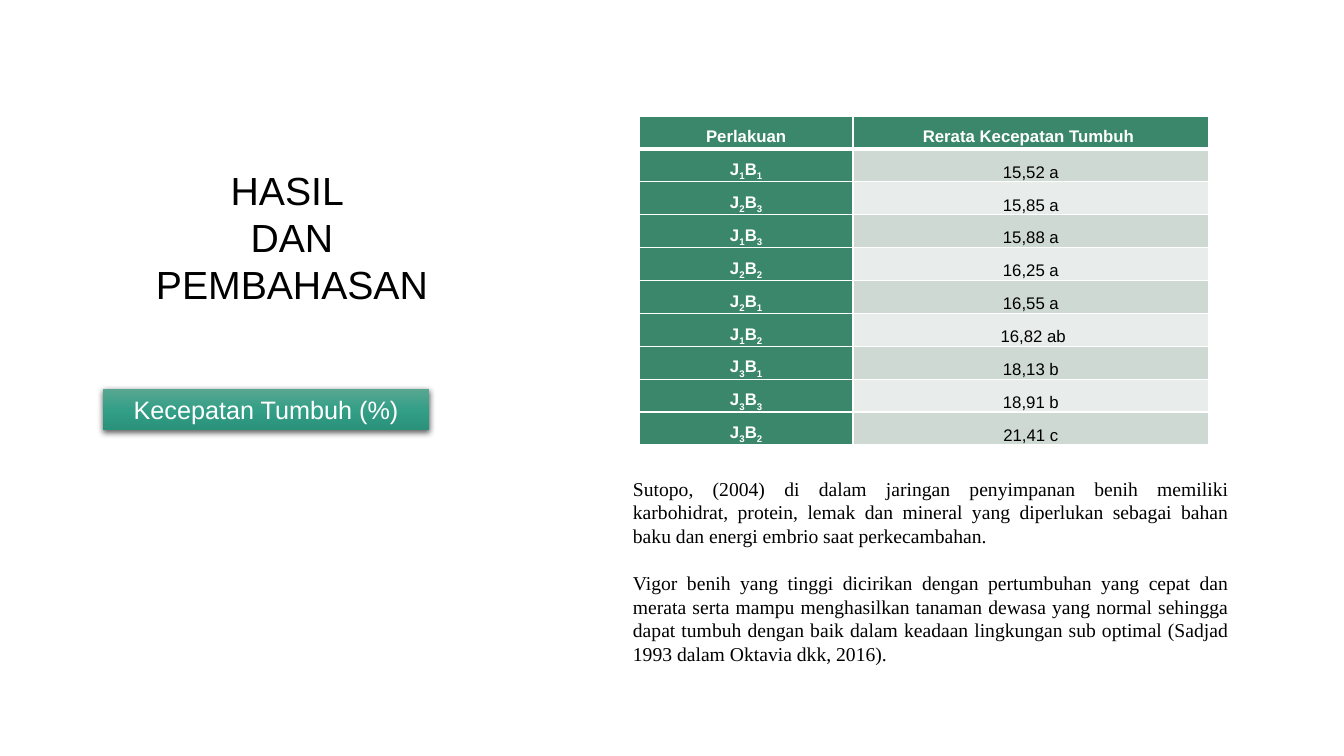
"""Builds the results slide on germination speed, with its table and discussion."""
import copy

import pptx
import pptx.dml.color
import pptx.enum.shapes
import pptx.enum.text
import pptx.oxml
import pptx.oxml.ns
import pptx.util

Pt = pptx.util.Pt
ALIGN = pptx.enum.text.PP_ALIGN
ANCHOR = pptx.enum.text.MSO_ANCHOR

HEADING = ["HASIL ", "DAN", "PEMBAHASAN"]
BANNER = "Kecepatan Tumbuh (%)"
HEADERS = ["Perlakuan", "Rerata Kecepatan Tumbuh "]
TREATMENTS = [
    ("J1B1", "15,52 a"),
    ("J2B3", "15,85 a"),
    ("J1B3", "15,88 a"),
    ("J2B2", "16,25 a"),
    ("J2B1", "16,55 a"),
    ("J1B2", " 16,82 ab"),
    ("J3B1", "18,13 b"),
    ("J3B3", "18,91 b"),
    ("J3B2", "21,41 c"),
]
DISCUSSION = [
    "Sutopo, (2004) di dalam jaringan penyimpanan benih memiliki karbohidrat, protein, "
    "lemak dan mineral yang diperlukan sebagai bahan baku dan energi embrio saat perkecambahan.",
    "Vigor benih yang tinggi dicirikan dengan pertumbuhan yang cepat dan merata serta mampu "
    "menghasilkan tanaman dewasa yang normal sehingga dapat tumbuh dengan baik dalam keadaan "
    "lingkungan sub optimal (Sadjad 1993 dalam Oktavia dkk, 2016).",
]

COLORS = {
    "text": "000000",
    "white": "FFFFFF",
    "green": "3A876B",
    "odd": "CED9D4",
    "even": "E8EDEB",
}
BANNER_STOPS = [(0, "59A792"), (0.5, "349F87"), (1, "2A917A")]
COLUMN_WIDTHS = [152.6, 254.2]
ROW_HEIGHT = 23.5
BODY_GAP = 16.8

HEADING_FONT = {"name": "Arial", "size": Pt(28), "bold": False}
BANNER_FONT = {"name": "Arial", "size": Pt(18)}
DISCUSSION_FONT = {"name": "Times New Roman", "size": Pt(14)}
LABEL_FONT = {"name": "Arial", "size": Pt(12), "bold": True}
VALUE_FONT = {"name": "Arial", "size": Pt(12), "bold": False}
CELL_MARGINS = {"margin_left": Pt(5), "margin_right": Pt(5), "margin_top": 0, "margin_bottom": 0}
FRAME = {"word_wrap": True, "auto_size": pptx.enum.text.MSO_AUTO_SIZE.NONE}


def rgb(value):
    return pptx.dml.color.RGBColor.from_string(value)


def apply(target, values):
    for key, value in values.items():
        setattr(target, key, value)


def style(font, values, color):
    apply(font, values)
    font.color.rgb = rgb(COLORS[color])


def write(frame, lines, font, color, align, anchor, gap=0):
    apply(frame, {**FRAME, "vertical_anchor": anchor})
    frame.text = "\n".join(lines)
    for index, paragraph in enumerate(frame.paragraphs):
        paragraph.alignment = align
        if index and gap:
            paragraph.space_before = Pt(gap)
        for run in paragraph.runs:
            style(run.font, font, color)


def border(cell, widths):
    for index, (side, width) in enumerate(widths.items()):
        line = pptx.oxml.parse_xml(
            f'<a:ln{side} {pptx.oxml.ns.nsdecls("a")} w="{Pt(width)}"><a:solidFill>'
            f'<a:srgbClr val="{COLORS["white"]}"/></a:solidFill></a:ln{side}>')
        cell._tc.get_or_add_tcPr().insert(index, line)


def fill_cell(cell, parts, font, color, fill, anchor, widths):
    apply(cell, {**CELL_MARGINS, "vertical_anchor": anchor})
    cell.fill.solid()
    cell.fill.fore_color.rgb = rgb(COLORS[fill])
    border(cell, widths)
    paragraph = cell.text_frame.paragraphs[0]
    apply(paragraph, {"alignment": ALIGN.CENTER, "line_spacing": 1.5})
    for part in parts:
        run = paragraph.add_run()
        run.text = part
        style(run.font, font, color)
        if part.isdigit():
            run.font._element.set("baseline", "-25000")


def add_heading(slide):
    heading = slide.shapes.title
    apply(heading, {"left": Pt(88.6), "top": Pt(115.2), "width": Pt(239.8), "height": Pt(108.7)})
    write(heading.text_frame, HEADING, HEADING_FONT, "text", ALIGN.CENTER, ANCHOR.TOP)


def add_banner(slide):
    banner = slide.shapes.add_shape(
        pptx.enum.shapes.MSO_SHAPE.RECTANGLE, Pt(73.4), Pt(277.9), Pt(233.3), Pt(29.1))
    banner.line.fill.background()
    banner.fill.gradient()
    banner.fill.gradient_angle = 270
    stops = banner._element.spPr.find(".//" + pptx.oxml.ns.qn("a:gsLst"))
    stops.insert(1, copy.deepcopy(stops[0]))
    for stop, (position, color) in zip(banner.fill.gradient_stops, BANNER_STOPS):
        stop.position = position
        stop.color.rgb = rgb(color)
    banner._element.spPr.append(pptx.oxml.parse_xml(
        f'<a:effectLst {pptx.oxml.ns.nsdecls("a")}>'
        f'<a:outerShdw blurRad="{Pt(4.5)}" dist="{Pt(1.5)}" dir="5400000" rotWithShape="0">'
        f'<a:srgbClr val="{COLORS["text"]}"><a:alpha val="63000"/></a:srgbClr>'
        '</a:outerShdw></a:effectLst>'))
    write(banner.text_frame, [BANNER], BANNER_FONT, "white", ALIGN.CENTER, ANCHOR.MIDDLE)


def add_treatments(slide):
    rows = len(TREATMENTS) + 1
    table = slide.shapes.add_table(
        rows, len(HEADERS), Pt(456.7), Pt(82.8), Pt(sum(COLUMN_WIDTHS)), Pt(rows * ROW_HEIGHT)).table
    for column, width in zip(table.columns, COLUMN_WIDTHS):
        column.width = Pt(width)
    for row in table.rows:
        row.height = Pt(ROW_HEIGHT)
    for index, header in enumerate(HEADERS):
        fill_cell(table.cell(0, index), [header], LABEL_FONT, "white", "green", ANCHOR.MIDDLE,
                  {"L": 1, "R": 1, "T": 1, "B": 3})
    for index, (treatment, speed) in enumerate(TREATMENTS, 1):
        widths = {"L": 1, "R": 1, "T": 3 if index == 1 else 1, "B": 1}
        fill_cell(table.cell(index, 0), treatment, LABEL_FONT, "white", "green",
                  ANCHOR.BOTTOM, widths)
        fill_cell(table.cell(index, 1), [speed], VALUE_FONT, "text",
                  "odd" if index % 2 else "even", ANCHOR.BOTTOM, widths)


def add_discussion(slide):
    discussion = slide.shapes.add_textbox(Pt(445), Pt(337), Pt(439.9), Pt(177.1))
    write(discussion.text_frame, DISCUSSION, DISCUSSION_FONT, "text",
          ALIGN.JUSTIFY, ANCHOR.TOP, BODY_GAP)


def main():
    presentation = pptx.Presentation()
    apply(presentation, {"slide_width": Pt(960), "slide_height": Pt(540)})
    slide = presentation.slides.add_slide(presentation.slide_layouts[5])
    add_banner(slide)
    add_heading(slide)
    add_discussion(slide)
    add_treatments(slide)
    presentation.save("out.pptx")


if __name__ == "__main__":
    main()
